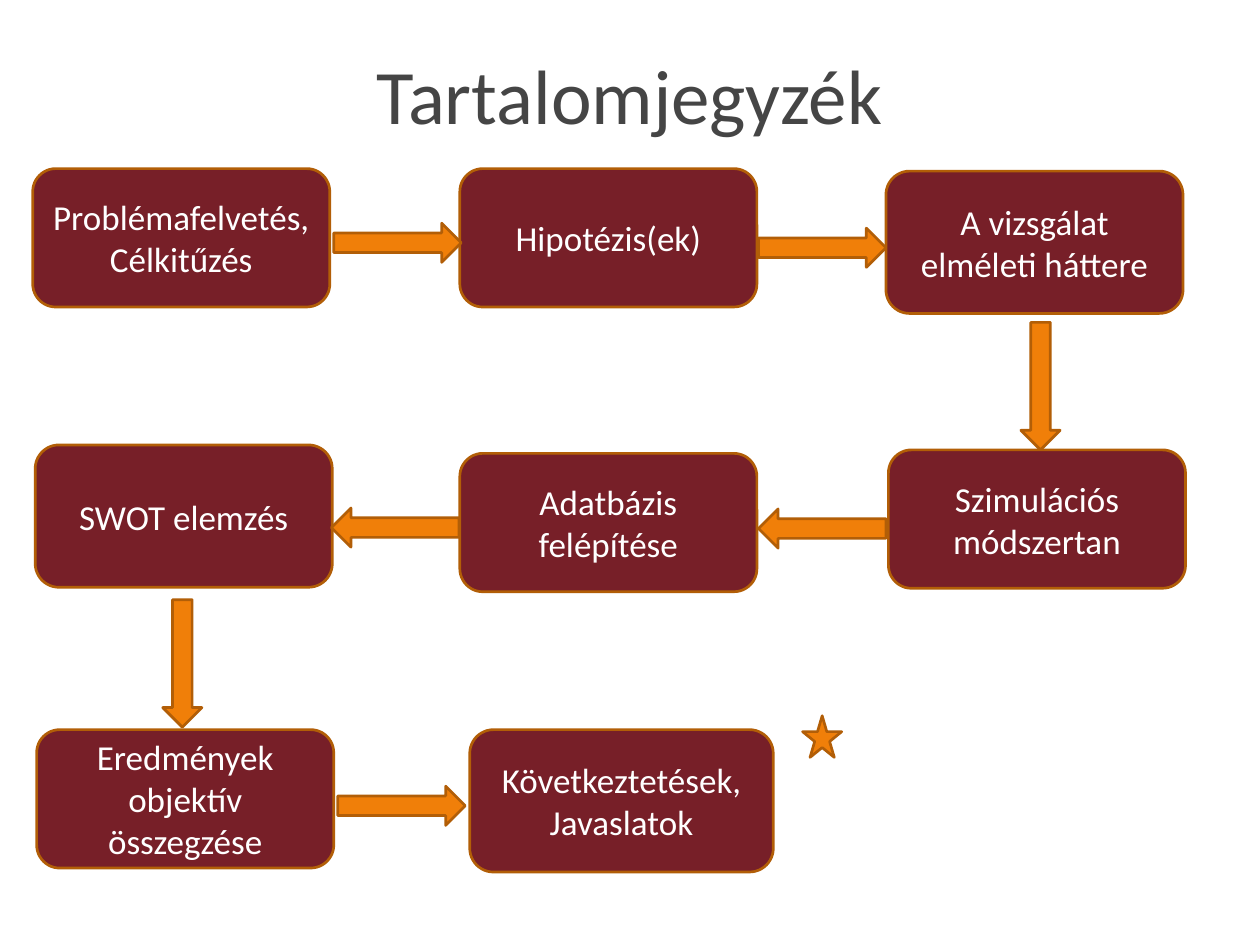
from pptx import Presentation
from pptx.dml.color import RGBColor
from pptx.enum.shapes import MSO_SHAPE
from pptx.enum.text import MSO_ANCHOR, PP_ALIGN
from pptx.util import Cm, Pt

ROUNDED = MSO_SHAPE.ROUNDED_RECTANGLE
ARROW = MSO_SHAPE.RIGHT_ARROW
STAR = MSO_SHAPE.STAR_5_POINT
CENTER = PP_ALIGN.CENTER
MIDDLE = MSO_ANCHOR.MIDDLE

COLORS = {"title": "454545", "step": "771F28", "accent": "F07F09",
          "outline": "B25E07", "step_text": "FFFFFF"}
RIGHT, DOWN, LEFT = 0, 90, 180
STEP_W, STEP_H, TALL_STEP_H = 5.99, 2.79, 2.87
ARROW_W, ARROW_H = 2.57, 0.79

# Offsets within the flow area and sizes, in centimetres
STEPS = [
    ("Problémafelvetés, Célkitűzés", 0, 0, STEP_W, STEP_H),
    ("Hipotézis(ek)", 8.61, 0, STEP_W, STEP_H),
    ("A vizsgálat elméleti háttere", 17.2, 0.05, STEP_W, TALL_STEP_H),
    ("SWOT elemzés", 0.05, 5.57, STEP_W, TALL_STEP_H),
    ("Adatbázis felépítése", 8.61, 5.74, STEP_W, STEP_H),
    ("Szimulációs módszertan", 17.25, 5.67, STEP_W, STEP_H),
    ("Következtetések,\nJavaslatok", 8.81, 11.31, 6.12, TALL_STEP_H),
    ("Eredmények objektív összegzése", 0.08, 11.31, STEP_W, STEP_H),
]
ARROWS = [
    (6.07, 1.1, RIGHT), (14.63, 1.2, RIGHT),
    (6.02, 6.84, LEFT), (14.63, 6.86, LEFT),
    (19.03, 3.99, DOWN), (1.73, 9.58, DOWN),
    (6.15, 12.45, RIGHT),
]


def write(frame, text, *, size, color, font="Calibri", align=CENTER, anchor=MIDDLE):
    frame.text = text
    frame.word_wrap = True
    frame.vertical_anchor = anchor
    for paragraph in frame.paragraphs:
        paragraph.alignment = align
        for run in paragraph.runs:
            run.font.name = font
            run.font.size = Pt(size)
            run.font.color.rgb = RGBColor.from_string(COLORS[color])


def add_figure(slide, kind, left, top, width, height, fill, rotation=0):
    figure = slide.shapes.add_shape(kind, Cm(left), Cm(top), Cm(width), Cm(height))
    figure.rotation = rotation
    figure.shadow.inherit = False
    figure.fill.solid()
    figure.fill.fore_color.rgb = RGBColor.from_string(COLORS[fill])
    figure.line.color.rgb = RGBColor.from_string(COLORS["outline"])
    figure.line.width = Pt(1.54)
    return figure


def place_title(slide, left, top, width, height):
    title = slide.shapes.title
    title.left, title.top = Cm(left), Cm(top)
    title.width, title.height = Cm(width), Cm(height)
    write(title.text_frame, "Tartalomjegyzék", size=44, color="title")


def place_flow(slide, left, top):
    # Steps
    for text, x, y, width, height in STEPS:
        step = add_figure(slide, ROUNDED, left + x, top + y, width, height, "step")
        write(step.text_frame, text, size=20, color="step_text")
    # Arrows between the steps
    for x, y, rotation in ARROWS:
        add_figure(slide, ARROW, left + x, top + y, ARROW_W, ARROW_H, "accent", rotation)
    # Star beside the last step
    add_figure(slide, STAR, left + 15.52, top + 11.03, 0.79, 0.84, "accent")


def main():
    deck = Presentation()
    deck.slide_width, deck.slide_height = Cm(25.4), Cm(19.05)
    title_only = deck.slide_layouts[5]
    slide = deck.slides.add_slide(title_only)
    place_title(slide, 2.74, -0.15, 19.91, 4.09)
    place_flow(slide, 0.66, 3.4)
    deck.save("out.pptx")


if __name__ == "__main__":
    main()
